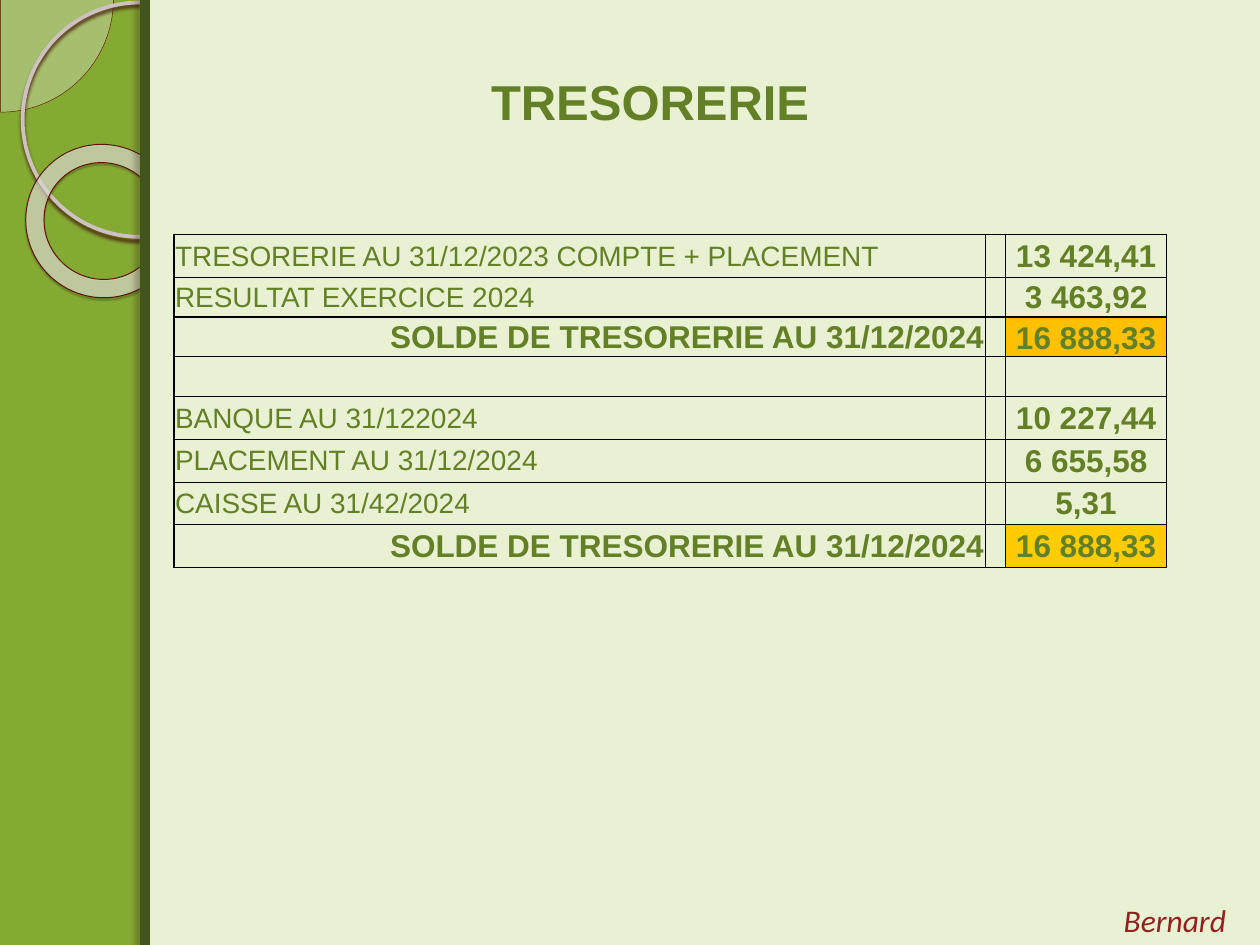
"""Build the treasury balance slide."""
from pptx import Presentation
from pptx import util as u
from pptx.dml.color import RGBColor
from pptx.enum import shapes, text
from pptx.oxml import ns, xmlchemy

BACKDROP = RGBColor(0x84, 0xAA, 0x33)
PANEL = RGBColor(0xE8, 0xF2, 0xD3)
STRIPE = RGBColor(0x42, 0x55, 0x1A)
STRIPE_SHADE = RGBColor(0x29, 0x13, 0x0D)
PALE = RGBColor(0xEC, 0xEA, 0xE9)
RING = RGBColor(0xCE, 0xC2, 0xC0)
RING_SHADE = RGBColor(0x44, 0x17, 0x0B)
DONUT = RGBColor(0xF7, 0xF5, 0xF5)
DONUT_SHADE = RGBColor(0x26, 0x09, 0x01)
EDGE = RGBColor(0x59, 0x15, 0x02)
INK = RGBColor(0x63, 0x80, 0x26)
SIGNATURE = RGBColor(0x92, 0x22, 0x22)
AMBER = RGBColor(0xFF, 0xC0, 0x00)
YELLOW = RGBColor(0xFF, 0xCC, 0x00)
BLACK = RGBColor(0, 0, 0)

SHAPE = shapes.MSO_SHAPE
ALIGN = text.PP_ALIGN
ANCHOR = text.MSO_ANCHOR
LABEL = {"size": u.Pt(16), "bold": False}
FIGURE = {"size": u.Pt(18), "bold": True}
TOTAL = "SOLDE DE TRESORERIE AU 31/12/2024"
BALANCES = [
    ("TRESORERIE AU 31/12/2023 COMPTE + PLACEMENT", "13 424,41", None),
    ("RESULTAT EXERCICE 2024", "3 463,92", None),
    (TOTAL, "16 888,33", AMBER),
    ("", "", None),
    ("BANQUE AU 31/122024", "10 227,44", None),
    ("PLACEMENT AU 31/12/2024", "6 655,58", None),
    ("CAISSE AU 31/42/2024", "5,31", None),
    (TOTAL, "16 888,33", YELLOW),
]
COLUMN_WIDTHS = [6.44, 0.16, 1.28]
ROW_HEIGHTS = [0.34] + [0.31] * 3 + [0.34] * 4
ROW_RULES = [1, 0.5, 1, 1, 1, 0.5, 0.5, 0.5, 1]


def inches(*lengths):
    return [u.Inches(length) for length in lengths]


class TreasurySlide:
    def __init__(self, deck, font="Arial", ink=INK):
        self.font, self.ink = font, ink
        self.slide = deck.slides.add_slide(deck.slide_layouts[6])
        backdrop = self.slide.background.fill
        backdrop.solid()
        backdrop.fore_color.rgb = BACKDROP

    def wording(self, paragraph, words, align, style, color=None):
        paragraph.alignment = align
        run = paragraph.add_run()
        run.text = words
        for name, value in {"name": self.font, **style}.items():
            setattr(run.font, name, value)
        run.font.color.rgb = color or self.ink

    def ornament(self, kind, box, fill=None, opacity=100, line=None,
                 shadow=None, adjust=(), turn=0):
        piece = self.slide.shapes.add_shape(kind, *inches(*box))
        piece.shadow.inherit = False
        piece.rotation = turn
        for index, value in enumerate(adjust):
            piece.adjustments[index] = value
        properties = piece._element.spPr
        if fill is None:
            piece.fill.background()
        else:
            piece.fill.solid()
            piece.fill.fore_color.rgb = fill
            if opacity < 100:
                tint = properties.find(".//" + ns.qn("a:srgbClr"))
                self.add(tint, "a:alpha", val=opacity * 1000)
        if line is None:
            piece.line.fill.background()
        else:
            piece.line.color.rgb, piece.line.width = line[0], u.Pt(line[1])
        if shadow:
            color, alpha, blur, distance, angle = shadow
            effects = properties.find(ns.qn("a:effectLst"))
            cast = self.add(effects, "a:outerShdw", blurRad=u.Pt(blur), dist=u.Pt(distance),
                            dir=angle * 60000, algn="tl", rotWithShape=0)
            self.add(self.add(cast, "a:srgbClr", val=color), "a:alpha", val=alpha * 1000)

    def add(self, parent, tag, **attributes):
        child = xmlchemy.OxmlElement(tag)
        for name, value in attributes.items():
            child.set(name, str(value))
        parent.append(child)
        return child

    def caption(self, box, words, align, style, color=None):
        frame = self.slide.shapes.add_textbox(*inches(*box)).text_frame
        frame.word_wrap = True
        self.wording(frame.paragraphs[0], words, align, style, color)

    def border(self, cell, widths):
        properties = cell._tc.get_or_add_tcPr()
        for index, (side, width) in enumerate(zip("LRTB", widths)):
            rule = xmlchemy.OxmlElement(f"a:ln{side}")
            rule.set("w", str(u.Pt(width)))
            self.add(self.add(rule, "a:solidFill"), "a:srgbClr", val=BLACK)
            properties.insert(index, rule)

    def balance_table(self, left, top):
        box = inches(left, top, sum(COLUMN_WIDTHS), sum(ROW_HEIGHTS))
        table = self.slide.shapes.add_table(len(BALANCES), len(COLUMN_WIDTHS), *box).table
        table.first_row = table.horz_banding = False
        for column, width in zip(table.columns, COLUMN_WIDTHS):
            column.width = u.Inches(width)
        margins = {"margin_left": u.Inches(0.01), "margin_right": u.Inches(0.01),
                   "margin_top": u.Inches(0.01), "margin_bottom": 0,
                   "vertical_anchor": ANCHOR.MIDDLE}
        for index, (label, amount, highlight) in enumerate(BALANCES):
            table.rows[index].height = u.Inches(ROW_HEIGHTS[index])
            column_rules = [1, 1 if index < 4 else 0.5, 0.5, 1]
            for position, words in enumerate((label, "", amount)):
                cell = table.cell(index, position)
                for name, value in margins.items():
                    setattr(cell, name, value)
                if position == 2 and highlight:
                    cell.fill.solid()
                    cell.fill.fore_color.rgb = highlight
                else:
                    cell.fill.background()
                self.border(cell, column_rules[position:position + 2] + ROW_RULES[index:index + 2])
                if words:
                    align = ALIGN.CENTER if position else ALIGN.RIGHT if highlight else ALIGN.LEFT
                    style = FIGURE if position or highlight else LABEL
                    self.wording(cell.text_frame.paragraphs[0], words, align, style)
        table.cell(2, 2).vertical_anchor = ANCHOR.BOTTOM


def main():
    deck = Presentation()
    deck.slide_width, deck.slide_height = inches(10, 7.5)
    page = TreasurySlide(deck)
    page.ornament(SHAPE.PIE, (-0.89, -0.9, 1.79, 1.79), PALE, 33, (EDGE, 0.25), adjust=(0, 54))
    page.ornament(SHAPE.OVAL, (0.18, 0.02, 1.86, 1.86), line=(RING, 2.15),
                  shadow=(RING_SHADE, 85, 2, 2, 90))
    page.ornament(SHAPE.DONUT, (0.2, 1.15, 1.23, 1.21), DONUT, 58, (EDGE, 0.58),
                  (DONUT_SHADE, 35, 1, 1.2, 75), (0.12,), 38.6)
    page.ornament(SHAPE.RECTANGLE, (1.11, 0, 8.89, 7.5), PANEL)
    page.ornament(SHAPE.RECTANGLE, (1.11, 0, 0.08, 7.5), STRIPE,
                  shadow=(STRIPE_SHADE, 25, 3, 3, 180))
    page.balance_table(1.38, 1.86)
    page.caption((2.56, 0.52, 5.2, 0.57), "TRESORERIE", ALIGN.CENTER,
                 {"size": u.Pt(28), "bold": True})
    page.caption((8.82, 7.1, 1.18, 0.4), "Bernard", ALIGN.LEFT,
                 {"name": "Calibri", "size": u.Pt(18), "italic": True}, SIGNATURE)
    deck.save("out.pptx")


if __name__ == "__main__":
    main()
